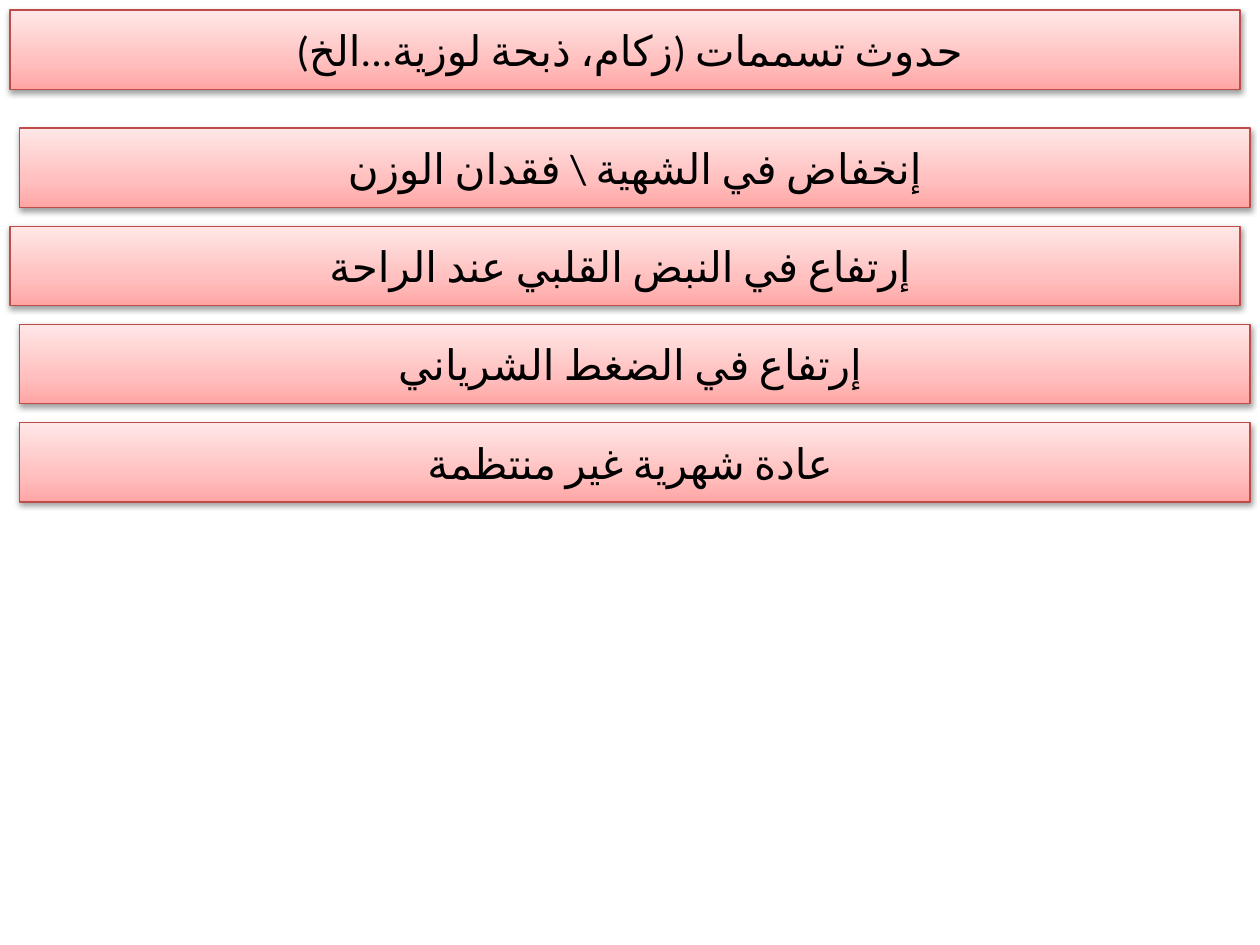
import copy

import pptx
import pptx.dml.color
import pptx.enum.lang
import pptx.enum.shapes
import pptx.enum.text
import pptx.oxml
import pptx.oxml.ns
import pptx.util
from pptx.util import Cm

COLORS = {
    "bottom": "FFA6A5",
    "middle": "FFC0BF",
    "top": "FFE7E7",
    "border": "BF4C48",
    "text": "000000",
    "shadow": "000000",
}
FONT = "Calibri"
GRADIENT = [(0, "bottom"), (0.35, "middle"), (1, "top")]
LEFT_EDGE, RIGHT_SHIFT = 0.2, 0.4
BAR_WIDTH, BAR_HEIGHT = 24.8, 1.6
LIST_TOP, LIST_STEP = 2.58, 1.98
HEADING = "حدوث تسممات (زكام، ذبحة لوزية...الخ) "
SYMPTOMS = [
    ("إنخفاض في الشهية \\ فقدان الوزن", RIGHT_SHIFT),
    ("إرتفاع في النبض القلبي عند الراحة ", LEFT_EDGE),
    ("إرتفاع في الضغط الشرياني ", RIGHT_SHIFT),
    ("عادة شهرية غير منتظمة ", RIGHT_SHIFT),
]


def color(name):
    return pptx.dml.color.RGBColor.from_string(COLORS[name])


def apply_format(target, values):
    for name, value in values.items():
        setattr(target, name, value)


def fill_gradient(box):
    box.fill.gradient()
    box.fill.gradient_angle = 90
    stop_list = box._element.spPr.find(".//" + pptx.oxml.ns.qn("a:gsLst"))
    stop_list.append(copy.deepcopy(stop_list[-1]))
    for stop, (position, name) in zip(box.fill.gradient_stops, GRADIENT):
        stop.position = position
        stop.color.rgb = color(name)


def add_shadow(box):
    box.shadow.inherit = False
    effects = box._element.spPr.find(pptx.oxml.ns.qn("a:effectLst"))
    effects.append(pptx.oxml.parse_xml(
        f'<a:outerShdw {pptx.oxml.ns.nsdecls("a")} blurRad="40000" dist="20000" '
        f'dir="5400000" rotWithShape="0"><a:srgbClr val="{COLORS["shadow"]}">'
        '<a:alpha val="38000"/></a:srgbClr></a:outerShdw>'
    ))


def format_span(span):
    apply_format(span.font, {
        "name": FONT,
        "size": pptx.util.Pt(24),
        "language_id": pptx.enum.lang.MSO_LANGUAGE_ID.ARABIC,
    })
    span.font.color.rgb = color("text")
    span._r.get_or_add_rPr().append(pptx.oxml.parse_xml(
        f'<a:cs {pptx.oxml.ns.nsdecls("a")} typeface="{FONT}"/>'
    ))


def add_bar(page, text, left, top, right_to_left=False):
    box = page.shapes.add_shape(
        pptx.enum.shapes.MSO_SHAPE.RECTANGLE,
        Cm(left), Cm(top), Cm(BAR_WIDTH), Cm(BAR_HEIGHT),
    )
    fill_gradient(box)
    box.line.color.rgb = color("border")
    box.line.width = pptx.util.Pt(0.75)
    add_shadow(box)
    apply_format(box.text_frame, {
        "word_wrap": True,
        "vertical_anchor": pptx.enum.text.MSO_ANCHOR.MIDDLE,
    })
    para = box.text_frame.paragraphs[0]
    para.alignment = pptx.enum.text.PP_ALIGN.CENTER
    if right_to_left:
        para._p.get_or_add_pPr().set("rtl", "1")
    span = para.add_run()
    span.text = text
    format_span(span)


def main():
    deck = pptx.Presentation()
    apply_format(deck, {"slide_width": Cm(25.4), "slide_height": Cm(19.05)})
    page = deck.slides.add_slide(deck.slide_layouts[6])
    add_bar(page, HEADING, LEFT_EDGE, 0.2, right_to_left=True)
    for row, (text, left) in enumerate(SYMPTOMS):
        add_bar(page, text, left, LIST_TOP + row * LIST_STEP)
    deck.save("out.pptx")


if __name__ == "__main__":
    main()
